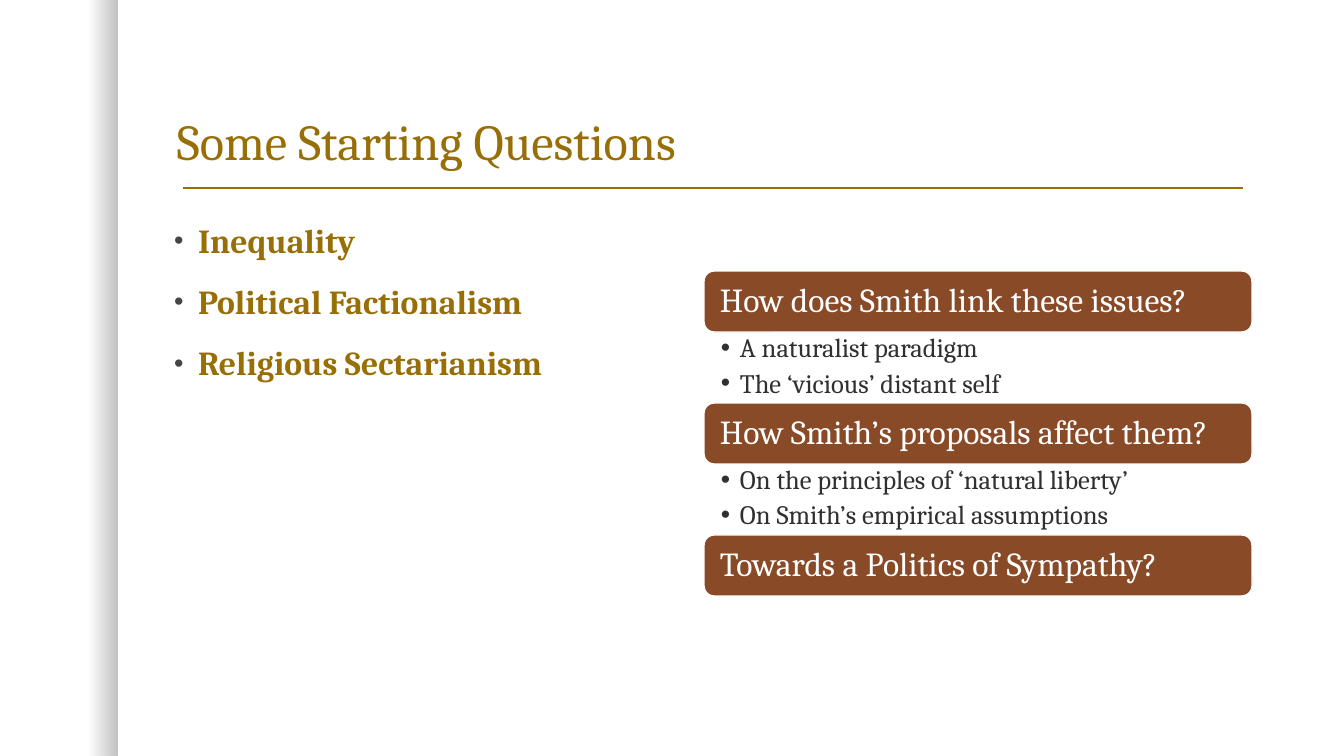
from lxml import etree
from pptx import Presentation
from pptx import util as u
from pptx.dml.color import RGBColor
from pptx.enum import shapes, text
from pptx.oxml.ns import qn

PX = 9144000 / 1008
COLORS = {"gold": "986F07", "brown": "894A27", "white": "FFFFFF",
          "ink": "303030", "bullet": "454545", "shade": "000000"}


def px(*lengths):
    return [u.Emu(round(n * PX)) for n in lengths]


def write(frame, lines, size, color, bold=False, margins=(10, 5, 10, 5),
          anchor=text.MSO_ANCHOR.TOP, gap_before=0, gap_after=0,
          indent=0, bullet_color=None, bullet_size=100):
    frame.word_wrap = True
    frame.auto_size = text.MSO_AUTO_SIZE.NONE
    frame.vertical_anchor = anchor
    (frame.margin_left, frame.margin_top,
     frame.margin_right, frame.margin_bottom) = px(*margins)
    for i, line in enumerate(lines):
        para = frame.add_paragraph() if i else frame.paragraphs[0]
        para.alignment = text.PP_ALIGN.LEFT
        para.line_spacing = 0.9
        para.space_before = u.Pt(gap_before if i else 0)
        para.space_after = u.Pt(gap_after)
        if indent:
            props = para._p.get_or_add_pPr()
            props.set("marL", str(px(indent)[0]))
            props.set("indent", str(-px(indent)[0]))
            tint = etree.SubElement(props, qn("a:buClr"))
            etree.SubElement(tint, qn("a:srgbClr"), val=COLORS[bullet_color or color])
            etree.SubElement(props, qn("a:buSzPct"), val=str(bullet_size * 1000))
            etree.SubElement(props, qn("a:buFont"), typeface="Arial")
            etree.SubElement(props, qn("a:buChar"), char="•")
        run = para.add_run()
        run.text = line
        run.font.name = "Cambria"
        run.font.size = u.Pt(size)
        run.font.bold = bold
        run.font.color.rgb = RGBColor.from_string(COLORS[color])


deck = Presentation()
deck.slide_width, deck.slide_height = px(1344, 756)
slide = deck.slides.add_slide(deck.slide_layouts[1])
title, topics = slide.placeholders

# Shaded left edge, fading out to the left
edge = slide.shapes.add_shape(shapes.MSO_SHAPE.RECTANGLE, *px(0, 0, 117, 756))
edge.shadow.inherit = False
edge.line.fill.background()
edge.fill.gradient()
edge.fill.gradient_angle = 0
for stop, position, alpha in zip(edge.fill.gradient_stops, (0.75, 1), (0, 25)):
    stop.position = position
    stop.color.rgb = RGBColor.from_string(COLORS["shade"])
    shade = stop._gs.find(qn("a:srgbClr"))
    etree.SubElement(shade, qn("a:alpha"), val=str(alpha * 1000))

# Title and the rule beneath it
title.left, title.top, title.width, title.height = px(167, 42, 1084, 134)
write(title.text_frame, ["Some Starting Questions"], 36, "gold",
      anchor=text.MSO_ANCHOR.BOTTOM)
rule = slide.shapes.add_connector(shapes.MSO_CONNECTOR.STRAIGHT,
                                  *px(183, 188, 1243, 188))
rule.line.color.rgb = RGBColor.from_string(COLORS["gold"])
rule.line.width = u.Pt(1)
etree.SubElement(rule._element.spPr, qn("a:effectLst"))

# Topics on the left
topics.left, topics.top, topics.width, topics.height = px(164, 219, 529, 462)
write(topics.text_frame,
      ["Inequality", "Political Factionalism", "Religious Sectarianism"],
      24, "gold", bold=True, gap_before=18, indent=24,
      bullet_color="bullet", bullet_size=80)

# Questions on the right, each followed by its points
questions = [
    ("How does Smith link these issues?",
     ["A naturalist paradigm", "The ‘vicious’ distant self"]),
    ("How Smith’s proposals affect them?",
     ["On the principles of ‘natural liberty’", "On Smith’s empirical assumptions"]),
    ("Towards a Politics of Sympathy?", []),
]
for row, (question, points) in enumerate(questions):
    top = 271 + 132 * row
    bar = slide.shapes.add_shape(shapes.MSO_SHAPE.ROUNDED_RECTANGLE,
                                 *px(704, top, 548, 61))
    bar.shadow.inherit = False
    bar.fill.solid()
    bar.fill.fore_color.rgb = RGBColor.from_string(COLORS["brown"])
    bar.line.color.rgb = RGBColor.from_string(COLORS["white"])
    bar.line.width = u.Pt(1)
    write(bar.text_frame, [question], 24, "white", margins=(13, 10, 13, 10),
          anchor=text.MSO_ANCHOR.MIDDLE)
    if points:
        answer = slide.shapes.add_textbox(*px(704, top + 61, 548, 70))
        write(answer.text_frame, points, 19, "ink", margins=(17, 3, 19, 3),
              gap_after=4.5, indent=19)

deck.save("out.pptx")
